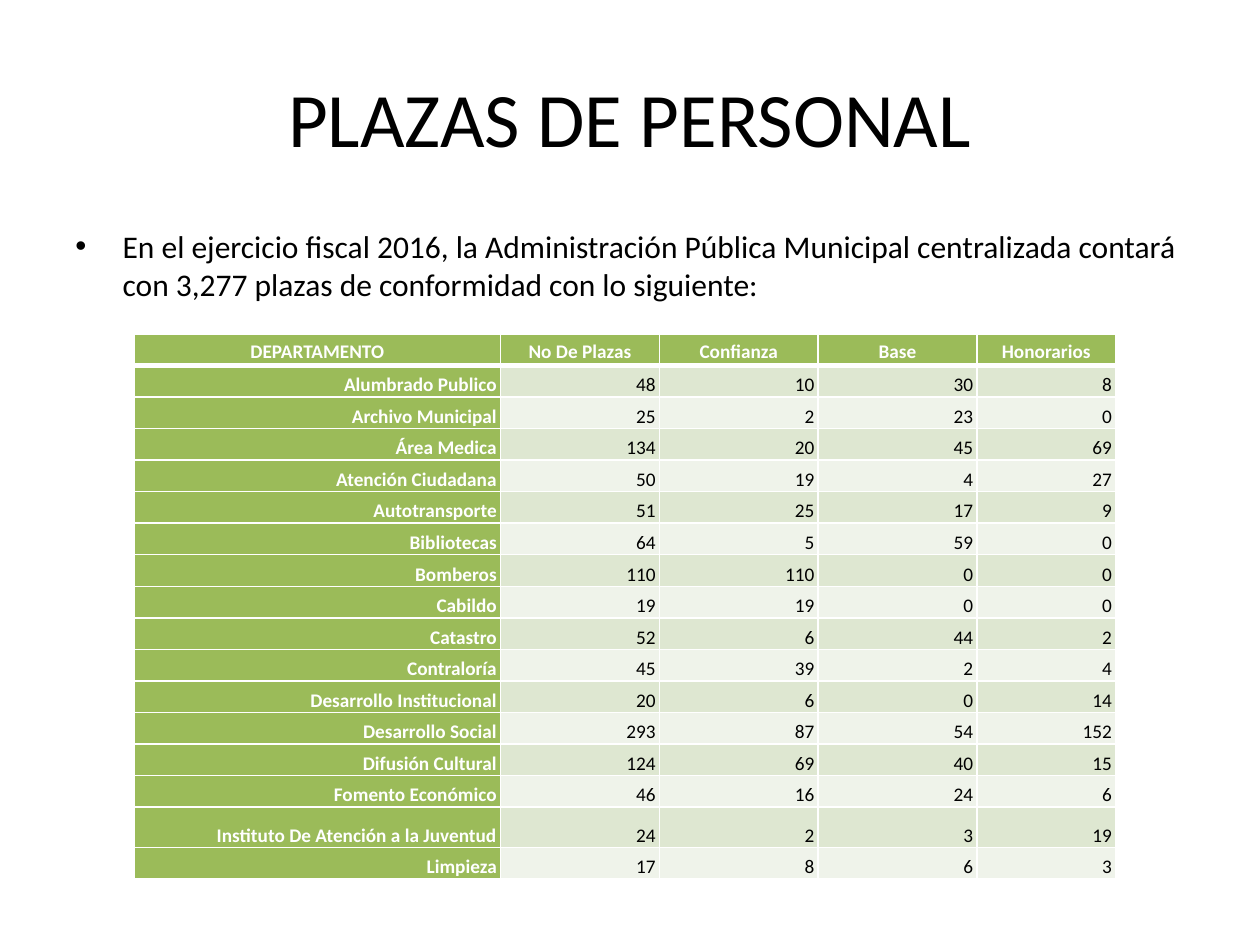
from lxml import etree
from pptx import Presentation
from pptx.dml.color import RGBColor
from pptx.enum.text import MSO_ANCHOR, PP_ALIGN
from pptx.oxml.ns import qn
from pptx.util import Pt

CENTER, RIGHT, LEFT = PP_ALIGN.CENTER, PP_ALIGN.RIGHT, PP_ALIGN.LEFT
TOP, MIDDLE, BOTTOM = MSO_ANCHOR.TOP, MSO_ANCHOR.MIDDLE, MSO_ANCHOR.BOTTOM

FONT = "Calibri"
COLORS = {
    "text": "000000",
    "white": "FFFFFF",
    "green": "9BBB59",
    "band_dark": "DEE7D1",
    "band_light": "EFF3EA",
}

HEADERS = ["DEPARTAMENTO", "No De Plazas", "Confianza", "Base", "Honorarios"]
DEPARTMENTS = [
    ("Alumbrado Publico", 48, 10, 30, 8),
    ("Archivo Municipal", 25, 2, 23, 0),
    ("Área Medica", 134, 20, 45, 69),
    ("Atención Ciudadana", 50, 19, 4, 27),
    ("Autotransporte", 51, 25, 17, 9),
    ("Bibliotecas", 64, 5, 59, 0),
    ("Bomberos", 110, 110, 0, 0),
    ("Cabildo", 19, 19, 0, 0),
    ("Catastro", 52, 6, 44, 2),
    ("Contraloría", 45, 39, 2, 4),
    ("Desarrollo Institucional", 20, 6, 0, 14),
    ("Desarrollo Social", 293, 87, 54, 152),
    ("Difusión Cultural", 124, 69, 40, 15),
    ("Fomento Económico", 46, 16, 24, 6),
    ("Instituto De Atención a la Juventud", 24, 2, 3, 19),
    ("Limpieza", 17, 8, 6, 3),
]
COLUMN_SHARES = [0.3735, 0.1617, 0.1617, 0.1617, 0.1414]
ROW_HEIGHT = 18.05
TALL_ROW, TALL_HEIGHT = 15, 23


def rgb(name):
    return RGBColor.from_string(COLORS[name])


def add_run(paragraph, text, size, color="text", bold=False):
    run = paragraph.add_run()
    run.text = text
    run.font.name = FONT
    run.font.size = Pt(size)
    run.font.bold = bold
    run.font.color.rgb = rgb(color)


def add_text_frame(slide, box, anchor):
    frame = slide.shapes.add_textbox(*(Pt(v) for v in box)).text_frame
    frame.word_wrap = True
    frame.vertical_anchor = anchor
    return frame


def add_title(slide, box):
    heading = add_text_frame(slide, box, MIDDLE).paragraphs[0]
    heading.alignment = CENTER
    add_run(heading, "PLAZAS DE PERSONAL", 44)


def add_intro(slide, box):
    intro = add_text_frame(slide, box, TOP).paragraphs[0]
    intro.alignment = LEFT
    intro.space_before = Pt(3.6)
    add_run(intro, "En el ejercicio fiscal 2016, la Administración Pública "
                   "Municipal centralizada contará con 3,277 plazas de "
                   "conformidad con lo siguiente:", 18)
    # Hanging bullet
    properties = intro._p.get_or_add_pPr()
    properties.set("marL", str(Pt(27)))
    properties.set("indent", str(-Pt(27)))
    etree.SubElement(properties, qn("a:buFont"), typeface="Arial")
    etree.SubElement(properties, qn("a:buChar"), char="•")


def add_borders(cell, row):
    thick_side = {0: "B", 1: "T"}.get(row)  # rule under the header
    properties = cell._tc.get_or_add_tcPr()
    for side in "LRTB":
        width = 3 if side == thick_side else 1
        line = etree.SubElement(properties, qn(f"a:ln{side}"), w=str(Pt(width)))
        fill = etree.SubElement(line, qn("a:solidFill"))
        etree.SubElement(fill, qn("a:srgbClr"), val=COLORS["white"])


def fill_cell(cell, row, column, text):
    is_header = row == 0
    is_green = is_header or column == 0
    add_borders(cell, row)
    cell.fill.solid()
    band = "band_dark" if row % 2 else "band_light"
    cell.fill.fore_color.rgb = rgb("green" if is_green else band)
    cell.margin_left = cell.margin_right = Pt(2.2)
    cell.margin_top = cell.margin_bottom = 0
    cell.vertical_anchor = MIDDLE if is_header else BOTTOM
    paragraph = cell.text_frame.paragraphs[0]
    paragraph.alignment = CENTER if is_header else RIGHT
    paragraph.line_spacing = 1.15
    add_run(paragraph, text, 11, "white" if is_green else "text", is_green)


def add_staff_table(slide, box):
    rows = [HEADERS, *DEPARTMENTS]
    table = slide.shapes.add_table(
        len(rows), len(HEADERS), *(Pt(v) for v in box)).table
    for column, share in zip(table.columns, COLUMN_SHARES):
        column.width = Pt(box[2] * share)
    for r, values in enumerate(rows):
        table.rows[r].height = Pt(TALL_HEIGHT if r == TALL_ROW else ROW_HEIGHT)
        for c, value in enumerate(values):
            fill_cell(table.cell(r, c), r, c, str(value))


def main():
    deck = Presentation()
    deck.slide_width, deck.slide_height = Pt(720), Pt(540)
    slide = deck.slides.add_slide(deck.slide_layouts[6])
    add_title(slide, (36, 21.6, 648, 90))
    add_intro(slide, (36, 126, 648, 356.4))
    add_staff_table(slide, (76.6, 190.8, 561, 311.8))
    deck.save("out.pptx")


if __name__ == "__main__":
    main()
